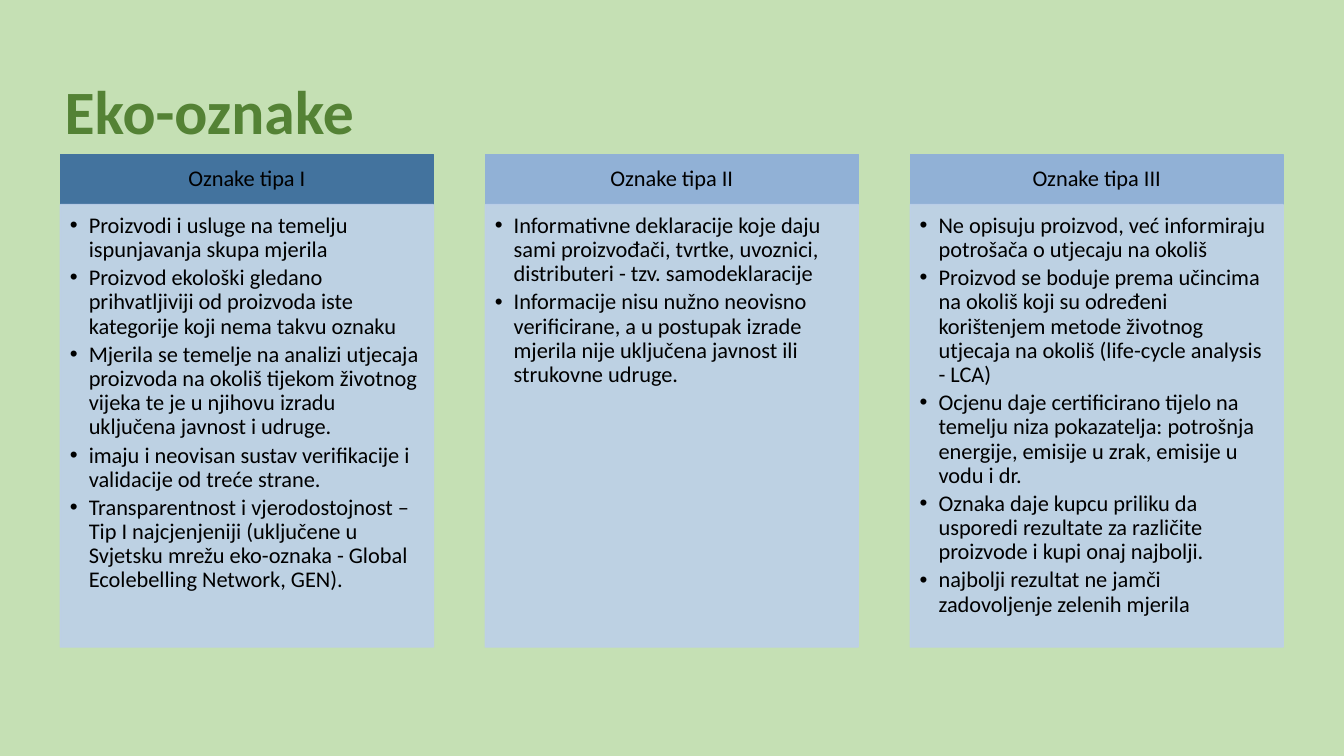
from dataclasses import dataclass

from lxml import etree
from pptx import Presentation
from pptx.dml.color import RGBColor
from pptx.enum.shapes import MSO_SHAPE
from pptx.enum.text import MSO_ANCHOR, MSO_AUTO_SIZE, PP_ALIGN
from pptx.oxml.ns import qn
from pptx.util import Pt

RECTANGLE = MSO_SHAPE.RECTANGLE
TOP, MIDDLE = MSO_ANCHOR.TOP, MSO_ANCHOR.MIDDLE
LEFT, CENTER = PP_ALIGN.LEFT, PP_ALIGN.CENTER

TITLE = "Eko-oznake"
LABEL_TYPES = [
    ("Oznake tipa I", "43739E", [
        "Proizvodi i usluge na temelju ispunjavanja skupa mjerila",
        "Proizvod ekološki gledano prihvatljiviji od proizvoda iste kategorije koji nema takvu oznaku",
        "Mjerila se temelje na analizi utjecaja proizvoda na okoliš tijekom životnog vijeka "
        "te je u njihovu izradu uključena javnost i udruge.",
        "imaju i neovisan sustav verifikacije i validacije od treće strane.",
        "Transparentnost i vjerodostojnost – Tip I najcjenjeniji (uključene u Svjetsku mrežu "
        "eko-oznaka - Global Ecolebelling Network, GEN).",
    ]),
    ("Oznake tipa II", "91B1D6", [
        "Informativne deklaracije koje daju sami proizvođači, tvrtke, uvoznici, distributeri "
        "- tzv. samodeklaracije",
        "Informacije nisu nužno neovisno verificirane, a u postupak izrade mjerila nije "
        "uključena javnost ili strukovne udruge.",
    ]),
    ("Oznake tipa III", "91B1D6", [
        "Ne opisuju proizvod, već informiraju potrošača o utjecaju na okoliš",
        "Proizvod se boduje prema učincima na okoliš koji su određeni korištenjem metode "
        "životnog utjecaja na okoliš (life-cycle analysis - LCA)",
        "Ocjenu daje certificirano tijelo na temelju niza pokazatelja: potrošnja energije, "
        "emisije u zrak, emisije u vodu i dr.",
        "Oznaka daje kupcu priliku da usporedi rezultate za različite proizvode i kupi onaj najbolji.",
        "najbolji rezultat ne jamči zadovoljenje zelenih mjerila",
    ]),
]


@dataclass(frozen=True)
class Theme:
    font: str = "Calibri"
    title_size: int = 44
    text_size: int = 16
    background: str = "C5E0B4"
    title: str = "548235"
    text: str = "000000"
    body: str = "BDD0E9"
    body_opacity: int = 90


THEME = Theme()
COLUMN_LEFT, COLUMN_WIDTH, COLUMN_PITCH = 43.2, 266.4, 303.5
HEADER_TOP, HEADER_HEIGHT, BODY_HEIGHT = 110.2, 36, 316
BULLET_INDENT, BULLET_GAP = 13.5, 2.9


def format_paragraph(paragraph, size, color, alignment, bold=False):
    paragraph.alignment = alignment
    paragraph.line_spacing = 0.9
    for run in paragraph.runs:
        run.font.name = THEME.font
        run.font.size = Pt(size)
        run.font.bold = bold
        run.font.color.rgb = RGBColor.from_string(color)


def set_bullet(paragraph):
    properties = paragraph._p.get_or_add_pPr()
    properties.set("marL", str(Pt(BULLET_INDENT)))
    properties.set("indent", str(-Pt(BULLET_INDENT)))
    etree.SubElement(properties, qn("a:buFont"), typeface="Arial")
    etree.SubElement(properties, qn("a:buChar"), char="•")


def add_panel(slide, left, top, height, color, opacity, insets, anchor):
    """Add a column rectangle and return its text frame."""
    shape = slide.shapes.add_shape(RECTANGLE, Pt(left), Pt(top), Pt(COLUMN_WIDTH), Pt(height))
    shape.shadow.inherit = False
    shape.fill.solid()
    shape.line.width = Pt(1)
    for fill in (shape.fill, shape.line.fill):
        fill.solid()
        fill.fore_color.rgb = RGBColor.from_string(color)
    if opacity < 100:
        for element in shape._element.spPr.iter(qn("a:srgbClr")):
            etree.SubElement(element, qn("a:alpha"), val=str(opacity * 1000))
    frame = shape.text_frame
    frame.word_wrap = True
    frame.vertical_anchor = anchor
    (frame.margin_left, frame.margin_top,
     frame.margin_right, frame.margin_bottom) = map(Pt, insets)
    return frame


def add_column(slide, left, heading, color, points):
    header = add_panel(slide, left, HEADER_TOP, HEADER_HEIGHT, color, 100,
                       (9, 5, 9, 5), MIDDLE)
    header.text = heading
    format_paragraph(header.paragraphs[0], THEME.text_size, THEME.text, CENTER)

    body = add_panel(slide, left, HEADER_TOP + HEADER_HEIGHT, BODY_HEIGHT, THEME.body,
                     THEME.body_opacity, (6.75, 6.75, 9, 10), TOP)
    body.text = "\n".join(points)
    for paragraph in body.paragraphs:
        set_bullet(paragraph)
        format_paragraph(paragraph, THEME.text_size, THEME.text, LEFT)
        paragraph.space_after = Pt(BULLET_GAP)


def add_title(slide):
    title = slide.shapes.title
    title.left, title.top, title.width, title.height = Pt(39), Pt(42.5), Pt(751), Pt(78.5)
    frame = title.text_frame
    frame.text = TITLE
    frame.word_wrap = True
    frame.auto_size = MSO_AUTO_SIZE.NONE
    frame.vertical_anchor = MIDDLE
    format_paragraph(frame.paragraphs[0], THEME.title_size, THEME.title, LEFT, bold=True)


def main():
    presentation = Presentation()
    presentation.slide_width, presentation.slide_height = Pt(960), Pt(540)
    slide = presentation.slides.add_slide(presentation.slide_layouts[5])
    background = slide.background.fill
    background.solid()
    background.fore_color.rgb = RGBColor.from_string(THEME.background)
    add_title(slide)
    for index, (heading, color, points) in enumerate(LABEL_TYPES):
        add_column(slide, COLUMN_LEFT + index * COLUMN_PITCH, heading, color, points)
    presentation.save("out.pptx")


if __name__ == "__main__":
    main()
